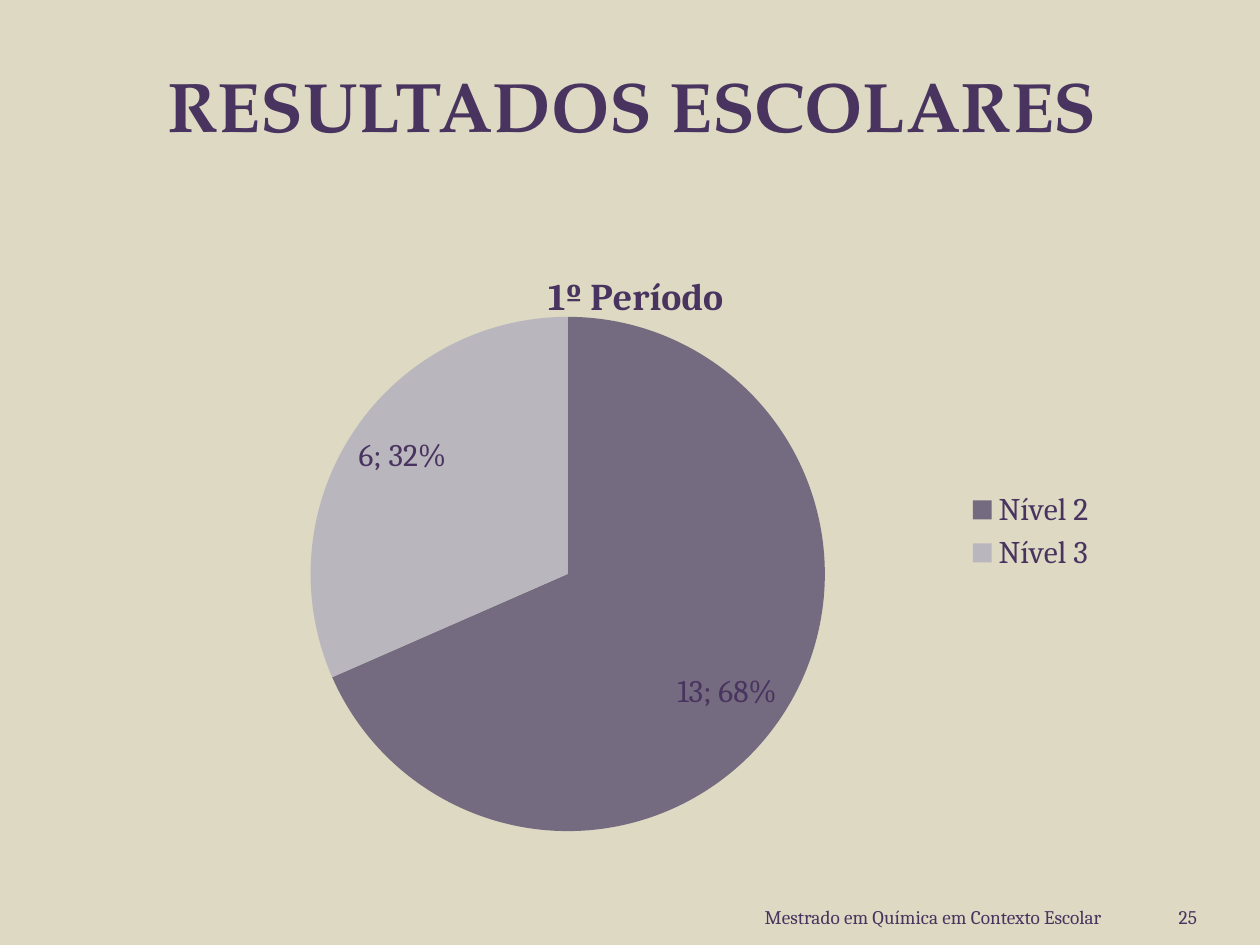
import lxml.etree
import pptx
import pptx.chart.data
import pptx.dml.color
import pptx.enum.chart
import pptx.enum.text
import pptx.oxml.ns
import pptx.util

EMU_PER_PX = 914400 / 126
BODY_FONT = "Cambria"
TITLE_FONT = "TeX Gyre Pagella"
PURPLE = "49345F"
BEIGE = "DDD9C3"
SLICE_COLORS = ["756B80", "BAB6BE"]


def px(length):
    return pptx.util.Emu(round(length * EMU_PER_PX))


def color(hex_string):
    return pptx.dml.color.RGBColor.from_string(hex_string)


def style_font(font, size, face=BODY_FONT, bold=False):
    font.name = face
    font.size = pptx.util.Pt(size)
    font.bold = bold
    font.color.rgb = color(PURPLE)


def write(frame, text, align="CENTER", **font_style):
    """Set one formatted paragraph in a text frame."""
    paragraph = frame.paragraphs[0]
    paragraph.alignment = getattr(pptx.enum.text.PP_ALIGN, align)
    run = paragraph.add_run()
    run.text = text
    style_font(run.font, **font_style)


def set_layout(parent, index, **fractions):
    """Place a chart part by fractions of the chart's size."""
    qn = pptx.oxml.ns.qn
    for old in parent.findall(qn("c:layout")):
        parent.remove(old)
    layout = lxml.etree.Element(qn("c:layout"))
    manual = lxml.etree.SubElement(layout, qn("c:manualLayout"))
    if "w" in fractions:
        lxml.etree.SubElement(manual, qn("c:layoutTarget")).set("val", "inner")
    for mode in ("xMode", "yMode"):
        lxml.etree.SubElement(manual, qn(f"c:{mode}")).set("val", "edge")
    for key, value in fractions.items():
        lxml.etree.SubElement(manual, qn(f"c:{key}")).set("val", str(value))
    parent.insert(index, layout)


class SlideBuilder:
    """Holds the current slide and draws its elements in the shared style."""

    def __init__(self, presentation):
        self.slide = presentation.slides.add_slide(presentation.slide_layouts[6])
        fill = self.slide.background.fill
        fill.solid()
        fill.fore_color.rgb = color(BEIGE)

    def text(self, text, left, top, width, height, margin_right=13, **style):
        box = self.slide.shapes.add_textbox(*map(px, (left, top, width, height)))
        frame = box.text_frame
        frame.word_wrap = True
        frame.vertical_anchor = pptx.enum.text.MSO_ANCHOR.MIDDLE
        frame.margin_right = px(margin_right)
        write(frame, text, **style)

    def pie(self, title, levels, left, top, width, height):
        data = pptx.chart.data.CategoryChartData(number_format="General")
        data.categories = list(levels)
        data.add_series("Series 1", list(levels.values()))
        chart = self.slide.shapes.add_chart(
            pptx.enum.chart.XL_CHART_TYPE.PIE,
            *map(px, (left, top, width, height)), data).chart
        style_font(chart.font, 18)

        chart.has_title = True
        write(chart.chart_title.text_frame, title, size=21.6, bold=True)
        chart.chart_title.include_in_layout = False
        set_layout(chart.chart_title._element, 1, x=0.39, y=0.08)

        chart.has_legend = True
        chart.legend.position = pptx.enum.chart.XL_LEGEND_POSITION.RIGHT
        chart.legend.include_in_layout = False

        plot = chart.plots[0]
        plot.vary_by_categories = True
        set_layout(plot._element.getparent(), 0, x=0.145, y=0.162, w=0.546, h=0.81)
        for index, slice_color in enumerate(SLICE_COLORS):
            fill = plot.series[0].points[index].format.fill
            fill.solid()
            fill.fore_color.rgb = color(slice_color)

        plot.has_data_labels = True
        labels = plot.data_labels
        style_font(labels.font, 18)
        labels.show_value = True
        labels.show_percentage = True
        labels.position = pptx.enum.chart.XL_LABEL_POSITION.INSIDE_END
        separator = lxml.etree.Element(pptx.oxml.ns.qn("c:separator"))
        separator.text = "; "
        labels._element.find(pptx.oxml.ns.qn("c:showBubbleSize")).addnext(separator)


def main():
    presentation = pptx.Presentation()
    presentation.slide_width = px(1260)
    presentation.slide_height = px(945)
    builder = SlideBuilder(presentation)
    footer = {"top": 901, "height": 32, "margin_right": 0, "align": "RIGHT", "size": 11}
    builder.text("Mestrado em Química em Contexto Escolar", left=598, width=504, **footer)
    builder.text("25", left=1113, width=84, **footer)
    builder.text("RESULTADOS ESCOLARES ", 95, 45, 1092, 118,
                 size=40, face=TITLE_FONT, bold=True)
    builder.pie("1º Período", {"Nível 2 ": 13, "Nível 3": 6}, 174, 214, 942, 635)
    presentation.save("out.pptx")


if __name__ == "__main__":
    main()
